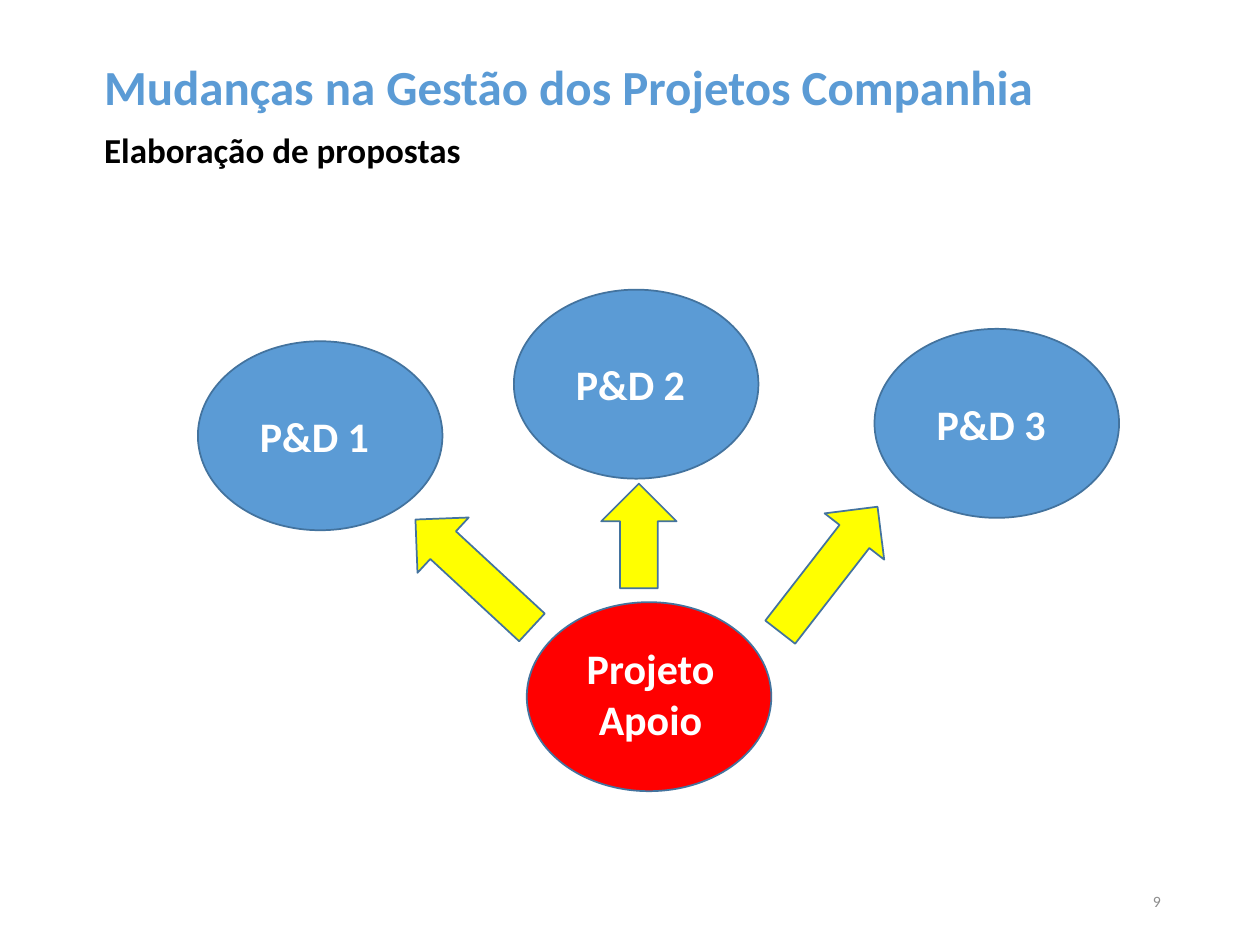
from dataclasses import dataclass

from pptx import Presentation
from pptx.dml.color import RGBColor
from pptx.enum.shapes import MSO_SHAPE
from pptx.enum.text import MSO_ANCHOR, PP_ALIGN
from pptx.util import Cm, Pt


@dataclass(frozen=True)
class Theme:
    font: str = "Calibri"
    blue: str = "5B9BD5"
    outline: str = "43739E"
    red: str = "FF0000"
    yellow: str = "FFFF00"
    white: str = "FFFFFF"
    black: str = "000000"
    gray: str = "8C8C8C"
    title_size: int = 28
    label_size: int = 24
    subtitle_size: int = 20
    number_size: int = 9


def write(frame, text, *, size, color, font, bold=True,
          align=PP_ALIGN.LEFT, anchor=MSO_ANCHOR.TOP):
    frame.word_wrap = True
    frame.vertical_anchor = anchor
    paragraph = frame.paragraphs[0]
    paragraph.alignment = align
    run = paragraph.add_run()
    run.text = text
    run.font.name = font
    run.font.size = Pt(size)
    run.font.bold = bold
    run.font.color.rgb = RGBColor.from_string(color)


class SlideBuilder:
    project_width, project_height = 4.93, 3.81
    arrow_width = 1.52

    def __init__(self, slide, theme):
        self.slide = slide
        self.theme = theme

    def text(self, text, left, top, width, height, **style):
        box = self.slide.shapes.add_textbox(Cm(left), Cm(top), Cm(width), Cm(height))
        write(box.text_frame, text, font=self.theme.font, **style)

    def outlined(self, preset, left, top, width, height, fill):
        shape = self.slide.shapes.add_shape(
            preset, Cm(left), Cm(top), Cm(width), Cm(height))
        shape.shadow.inherit = False
        shape.fill.solid()
        shape.fill.fore_color.rgb = RGBColor.from_string(fill)
        shape.line.color.rgb = RGBColor.from_string(self.theme.outline)
        shape.line.width = Pt(1)
        return shape

    def project(self, label, left, top, fill, inset=(1, 1.27),
                label_height=1.27, align=PP_ALIGN.LEFT):
        self.outlined(MSO_SHAPE.OVAL, left, top,
                      self.project_width, self.project_height, fill)
        self.text(label, left + inset[0], top + inset[1], 3.61, label_height,
                  size=self.theme.label_size, color=self.theme.white, align=align)

    def arrow(self, left, top, length, rotation):
        arrow = self.outlined(MSO_SHAPE.UP_ARROW, left, top,
                              self.arrow_width, length, self.theme.yellow)
        arrow.rotation = rotation


def main():
    presentation = Presentation()
    presentation.slide_width, presentation.slide_height = Cm(25.4), Cm(19.05)
    theme = Theme()
    slide = presentation.slides.add_slide(presentation.slide_layouts[6])
    builder = SlideBuilder(slide, theme)

    # Slide number
    builder.text("9", 17.93, 17.65, 5.72, 1.02, size=theme.number_size,
                 color=theme.gray, bold=False, align=PP_ALIGN.RIGHT,
                 anchor=MSO_ANCHOR.MIDDLE)

    # R&D projects
    project_places = [(3.99, 6.88), (10.36, 5.84), (17.63, 6.63)]
    for number, (left, top) in enumerate(project_places, start=1):
        builder.project(f"P&D {number}", left, top, theme.blue)

    # Support project
    builder.project("Projeto Apoio", 10.62, 12.14, theme.red, inset=(0.69, 0.69),
                    label_height=2.31, align=PP_ALIGN.CENTER)

    # Arrows from the support project to each R&D project
    for left, top, length, rotation in [
        (8.79, 9.96, 3.2, 312.8),
        (12.12, 9.75, 2.11, 0),
        (15.95, 9.88, 3.2, 37.8),
    ]:
        builder.arrow(left, top, length, rotation)

    # Headings
    builder.text("Mudanças na Gestão dos Projetos Companhia", 1.85, 1.02, 21.11, 2.24,
                 size=theme.title_size, color=theme.blue)
    builder.text("Elaboração de propostas", 1.85, 2.46, 8.69, 1.12,
                 size=theme.subtitle_size, color=theme.black)

    presentation.save("out.pptx")


if __name__ == "__main__":
    main()
